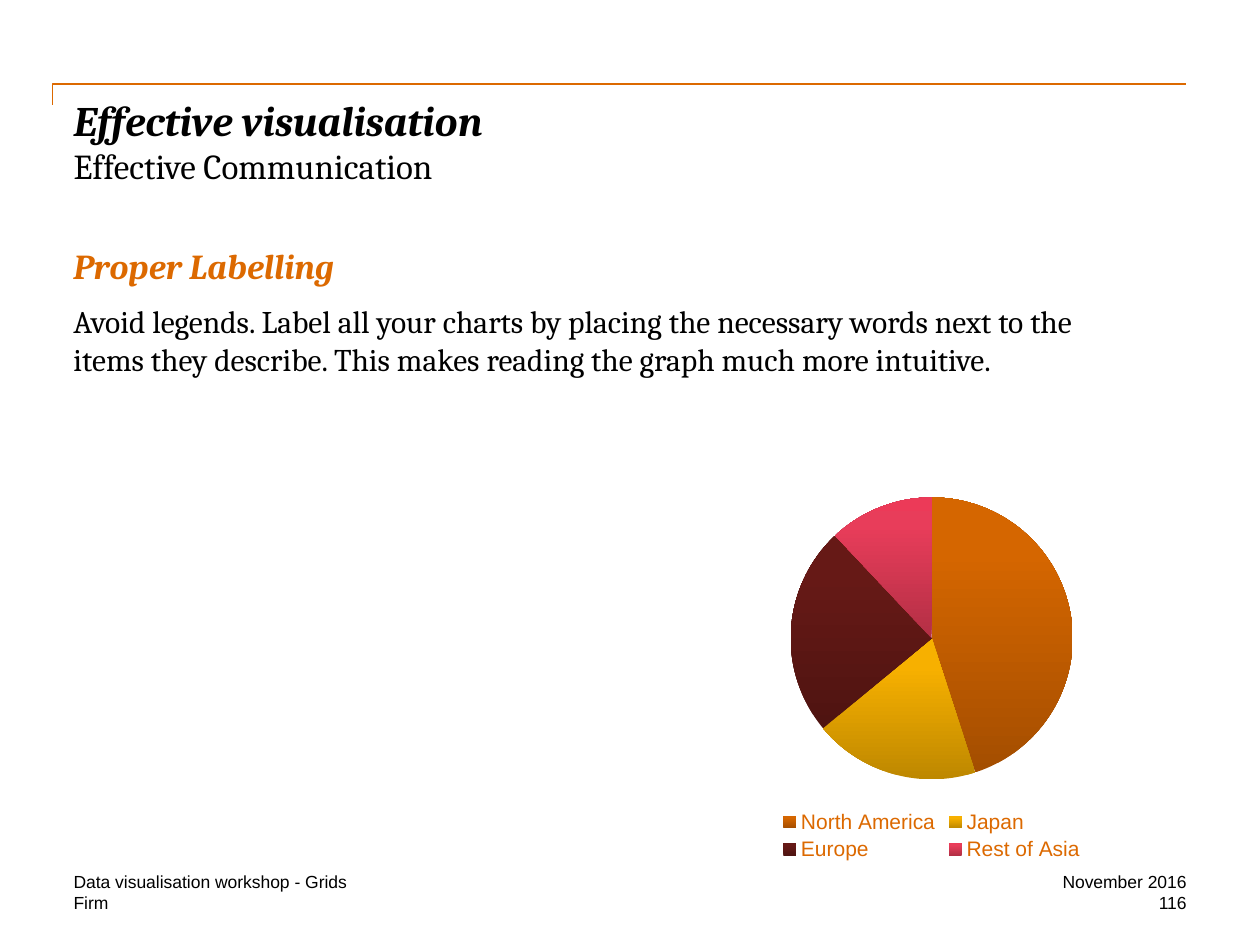
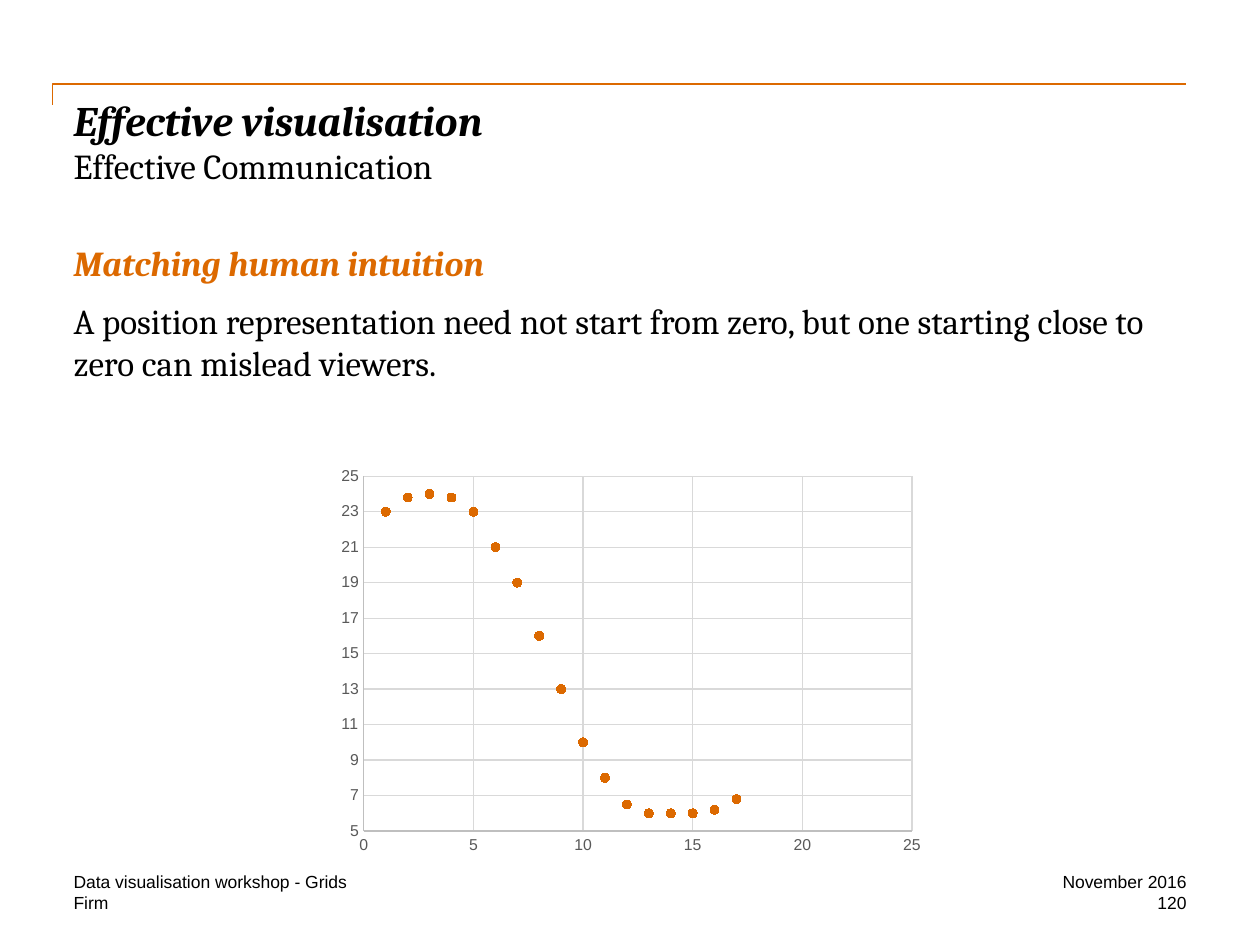
"""Build two slides on effective chart communication."""
import copy

import pptx
import pptx.chart.data
import pptx.dml.color
import pptx.enum.chart
import pptx.enum.text
import pptx.oxml
import pptx.oxml.ns
import pptx.util

Pt = pptx.util.Pt
RGB = pptx.dml.color.RGBColor
Align = pptx.enum.text.PP_ALIGN
ChartType = pptx.enum.chart.XL_CHART_TYPE

ORANGE = RGB(0xDC, 0x69, 0x00)
BLACK = RGB(0, 0, 0)
AXIS_TEXT = RGB(0x59, 0x59, 0x59)
AXIS_LINE = RGB(0xBF, 0xBF, 0xBF)
GRID_LINE = RGB(0xD9, 0xD9, 0xD9)

HEADING_FONT, SMALL_FONT = "Cambria", "Arial"
LEFT, RIGHT = 42, 678
FOOTER_TOPS = (498, 510)
FOOTERS_LEFT = ("Data visualisation workshop - Grids", "Firm")
DATE = "November 2016"
TITLE, SUBTITLE = "Effective visualisation", "Effective Communication"

LABELLING = {
    "page": "116",
    "heading": "Proper Labelling",
    "message": "Avoid legends. Label all your charts by placing the necessary words next to the "
               "items they describe. This makes reading the graph much more intuitive.",
    "message_size": 18,
    "box": (LEFT, 139.5, 607, 85),
}
INTUITION = {
    "page": "120",
    "heading": "Matching human intuition",
    "message": "A position representation need not start from zero, but one starting close to "
               "zero can mislead viewers.",
    "message_size": 20,
    "box": (LEFT, 138, 636, 354),
}
REGIONS = [
    ("North America", 45, ("A44E00", "D56600", "D66600")),
    ("Japan", 19, ("BE8800", "F7B000", "F8B100")),
    ("Europe", 24, ("4F1411", "661916", "681814")),
    ("Rest of Asia", 12, ("B32F45", "E83D5A", "EC3A58")),
]
SHADE_POSITIONS = (0, 0.8, 1)
POSITIONS = [23, 23.8, 24, 23.8, 23, 21, 19, 16, 13, 10, 8, 6.5, 6, 6, 6, 6.2, 6.8]
SCATTER_PLOT = {"x": 0.067, "y": 0.167, "w": 0.89, "h": 0.682}


def style(font, name, size, color, strong=False):
    font.name, font.size = name, Pt(size)
    font.color.rgb = color
    font.bold = font.italic = strong


def add_text(slide, box, lines, align=Align.LEFT, gap=0):
    """Add a text box whose lines are (text, font, size, color, strong)."""
    frame = slide.shapes.add_textbox(*map(Pt, box)).text_frame
    frame.word_wrap = True
    frame.margin_left = frame.margin_right = frame.margin_top = frame.margin_bottom = 0
    for index, (text, *look) in enumerate(lines):
        paragraph = frame.add_paragraph() if index else frame.paragraphs[0]
        paragraph.text = text
        paragraph.alignment = align
        paragraph.space_after = Pt(gap)
        style(paragraph.font, *look)


def add_lesson(deck, lesson):
    slide = deck.slides.add_slide(deck.slide_layouts[6])
    outline = slide.shapes.build_freeform(Pt(30), Pt(60))
    outline.add_line_segments([(Pt(30), Pt(48)), (Pt(RIGHT), Pt(48))], close=False)
    rule = outline.convert_to_shape()
    rule.shadow.inherit = False
    rule.fill.background()
    rule.line.color.rgb = ORANGE
    rule.line.width = Pt(1)

    add_text(slide, (LEFT, 54, RIGHT - LEFT, 72),
             [(TITLE, HEADING_FONT, 24, BLACK, True), (SUBTITLE, HEADING_FONT, 20, BLACK)])
    add_text(slide, lesson["box"],
             [(lesson["heading"], HEADING_FONT, 20, ORANGE, True),
              (lesson["message"], HEADING_FONT, lesson["message_size"], BLACK)], gap=9)
    for top, left_note, right_note in zip(FOOTER_TOPS, FOOTERS_LEFT, (DATE, lesson["page"])):
        add_text(slide, (LEFT, top, 414, 12), [(left_note, SMALL_FONT, 10, BLACK)])
        add_text(slide, (558, top, 120, 12), [(right_note, SMALL_FONT, 10, BLACK)], Align.RIGHT)
    return slide


def add_chart(slide, kind, box, data):
    chart = slide.shapes.add_chart(kind, *map(Pt, box), data).chart
    chart.has_title = chart.has_legend = False
    style(chart.font, SMALL_FONT, 10, BLACK)
    return chart


def add_region_pie(slide):
    data = pptx.chart.data.CategoryChartData()
    data.categories = [name for name, _, _ in REGIONS]
    data.add_series("Series 1", [share for _, share, _ in REGIONS])
    pie = add_chart(slide, ChartType.PIE, (371.5, 274.3, 321.8, 220.3), data)
    pie.plots[0].vary_by_categories = True
    pie.has_legend = True
    pie.legend.position = pptx.enum.chart.XL_LEGEND_POSITION.BOTTOM
    pie.legend.include_in_layout = False
    style(pie.legend.font, SMALL_FONT, 12, ORANGE)
    for index, (_, _, shades) in enumerate(REGIONS):
        fill = pie.plots[0].series[0].points[index].format.fill
        fill.gradient()
        fill.gradient_angle = 90
        first_stop = fill.gradient_stops[0]._gs
        first_stop.addnext(copy.deepcopy(first_stop))
        for stop, position, shade in zip(fill.gradient_stops, SHADE_POSITIONS, shades):
            stop.position = position
            stop.color.rgb = RGB.from_string(shade)


def style_axis(axis, low, step):
    axis.minimum_scale, axis.maximum_scale, axis.major_unit = low, 25, step
    axis.major_tick_mark = axis.minor_tick_mark = pptx.enum.chart.XL_TICK_MARK.NONE
    axis.has_major_gridlines = True
    for line, color in ((axis.format.line, AXIS_LINE),
                        (axis.major_gridlines.format.line, GRID_LINE)):
        line.color.rgb = color
        line.width = Pt(0.75)
    style(axis.tick_labels.font, SMALL_FONT, 9, AXIS_TEXT)


def set_inner_plot(chart, plot):
    area = chart._chartSpace.chart.plotArea
    for layout in area.findall(pptx.oxml.ns.qn("c:layout")):
        area.remove(layout)
    parts = [("layoutTarget", "inner"), ("xMode", "edge"), ("yMode", "edge"), *plot.items()]
    inner = "".join(f'<c:{tag} val="{value}"/>' for tag, value in parts)
    area.insert(0, pptx.oxml.parse_xml(
        f'<c:layout {pptx.oxml.ns.nsdecls("c")}><c:manualLayout>{inner}</c:manualLayout></c:layout>'))


def add_position_scatter(slide):
    data = pptx.chart.data.XyChartData()
    points = data.add_series("Series 1")
    for x, y in enumerate(POSITIONS, 1):
        points.add_data_point(x, y)
    scatter = add_chart(slide, ChartType.XY_SCATTER, (184.3, 222.5, 352, 297.4), data)
    scatter.plots[0].vary_by_categories = False
    series = scatter.plots[0].series[0]
    series.format.line.fill.background()
    series.marker.style = pptx.enum.chart.XL_MARKER_STYLE.CIRCLE
    series.marker.size = 5
    for fill in (series.marker.format.fill, series.marker.format.line.fill):
        fill.solid()
        fill.fore_color.rgb = ORANGE
    style_axis(scatter.category_axis, 0, 5)
    style_axis(scatter.value_axis, 5, 2)
    set_inner_plot(scatter, SCATTER_PLOT)


def main():
    deck = pptx.Presentation()
    deck.slide_width, deck.slide_height = Pt(720), Pt(540)
    add_region_pie(add_lesson(deck, LABELLING))
    add_position_scatter(add_lesson(deck, INTUITION))
    deck.save("out.pptx")


if __name__ == "__main__":
    main()
